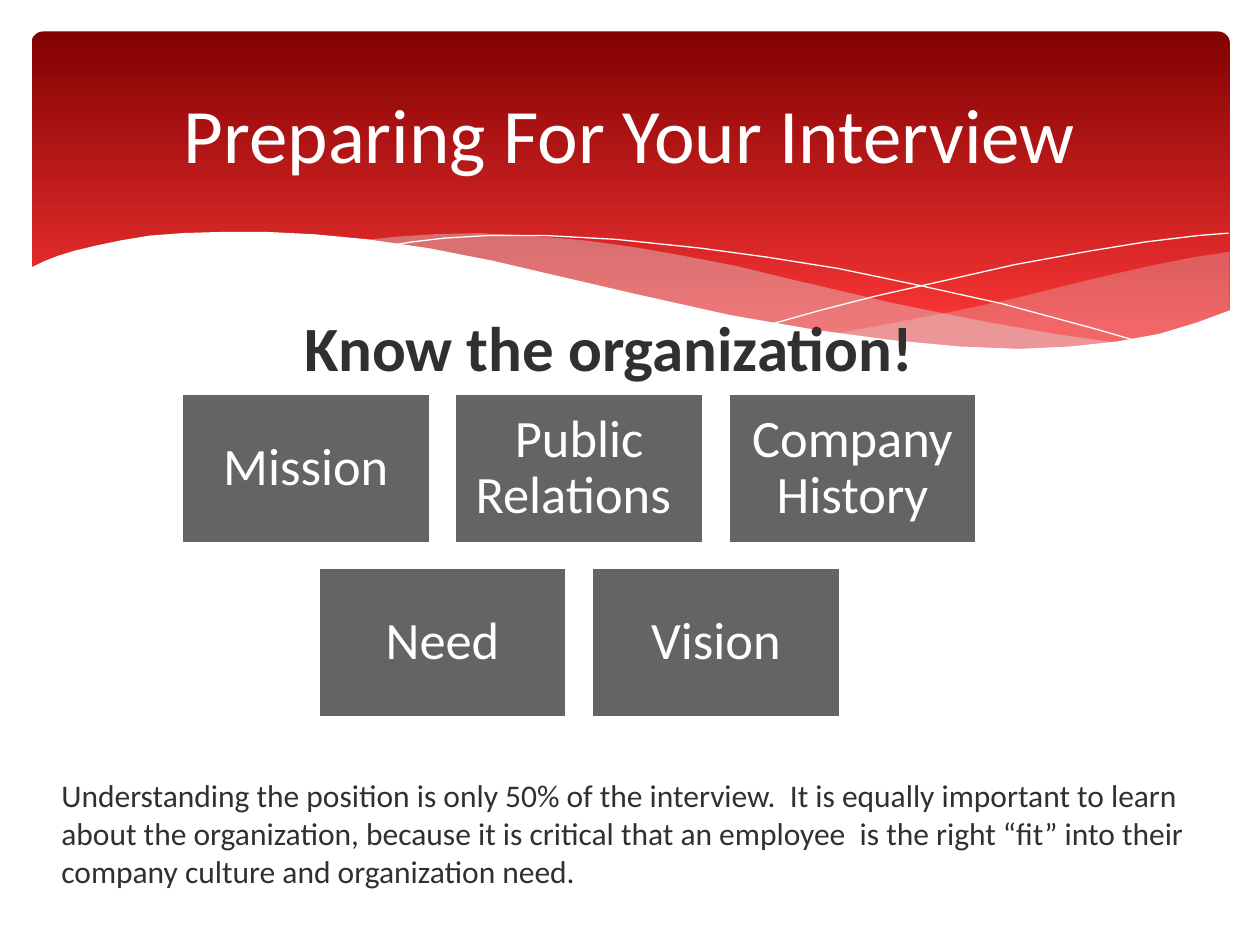
from lxml import etree
from pptx import Presentation
from pptx.dml.color import RGBColor
from pptx.enum.shapes import MSO_SHAPE
from pptx.enum.text import MSO_ANCHOR, MSO_AUTO_SIZE, PP_ALIGN
from pptx.oxml.ns import qn
from pptx.util import Pt

RECT, ROUND_RECT = MSO_SHAPE.RECTANGLE, MSO_SHAPE.ROUNDED_RECTANGLE
MIDDLE, TOP = MSO_ANCHOR.MIDDLE, MSO_ANCHOR.TOP
CENTER, LEFT = PP_ALIGN.CENTER, PP_ALIGN.LEFT
GROW = MSO_AUTO_SIZE.SHAPE_TO_FIT_TEXT

WHITE = RGBColor(0xFF, 0xFF, 0xFF)
DARK_RED = RGBColor(0x82, 0x01, 0x01)
RED = RGBColor(0xFE, 0x37, 0x37)
MIST = RGBColor(0xDE, 0xDE, 0xE0)
GRAY = RGBColor(0x64, 0x64, 0x64)
INK = RGBColor(0x30, 0x30, 0x30)

RIGHT_WAVE = [
    (702, 144), (682.6, 146.9), (662, 151), (641.5, 155.5), (620, 160.5),
    (579.6, 170.6), (542, 178.6), (508, 185), (476, 191), (507.6, 195.1),
    (536.4, 198), (562.3, 199.4), (586, 200), (607.7, 199.4), (627.8, 197.3),
    (645.8, 194.4), (663, 190.8), (678, 186.5), (693.4, 181.4),
    (702.7, 177.8), (702.7, 144)]
LEFT_WAVE = [
    (643, 196.6), (602.6, 190.8), (558, 182.9), (508.3, 172.8),
    (452.9, 159.8), (420.5, 152), (389.5, 146), (361.4, 141.1),
    (334.8, 137.5), (302.4, 134.6), (273.6, 133.2), (247.7, 133.9),
    (225.4, 135.4), (205.9, 137.5), (232.6, 141.1), (260.6, 146.2),
    (290.9, 151.9), (323.3, 159.8), (353.5, 167), (381.6, 172.8),
    (407.5, 178.6), (432.7, 183.6), (456.5, 187.9), (478.8, 191.5),
    (500.4, 194.4), (519.8, 196.6), (547.9, 198.7), (573.1, 200.2),
    (596.2, 200.2), (617, 199.4), (636.5, 197.3)]
FALLING_LINE = [
    (222.5, 140.4), (236, 138.2), (254.2, 136.1), (278.6, 134.6),
    (311.8, 134.6), (352, 136.8), (400.3, 141.8), (437.8, 146.9),
    (478.8, 153.4), (523.4, 162.7), (572.4, 173.5), (625.7, 187.9),
    (653, 195.8)]
RISING_LINE = [
    (441.4, 185), (470, 177), (500.4, 169.2), (538.6, 160.6), (580, 151.2),
    (623.5, 143.3), (655, 138.2), (684.7, 134.6), (702, 133.2)]
WHITE_WAVE = [
    (703.4, 177.1), (684, 184.3), (662.4, 190.8), (638.6, 195.1), (612, 198),
    (582.5, 199.4), (547.9, 198), (509.8, 194.4), (466.6, 188.6),
    (416.9, 180), (362.2, 167.8), (321.8, 158.4), (281.5, 149),
    (244.8, 141.8), (210.2, 136.8), (180, 133.9), (152, 132.5),
    (127.4, 132.5), (105, 133.2), (85.7, 134.6), (68.4, 137.5),
    (54.7, 140.4), (42.5, 143.3), (33.1, 146.2), (25.9, 149), (16.6, 153.4),
    (16.6, 236.9), (703.4, 236.9)]


def add_curve(points, closed):
    (x, y), *rest = [(Pt(x), Pt(y)) for x, y in points]
    builder = s.shapes.build_freeform(x, y)
    builder.add_line_segments(rest, close=closed)
    sp = builder.convert_to_shape()
    sp.shadow.inherit = False
    return sp


def write(sp, text, size, color, align, frame, bold=False):
    tf = sp.text_frame
    for name, value in frame.items():
        setattr(tf, name, value)
    p = tf.paragraphs[0]
    p.alignment = align
    r = p.add_run()
    r.text = text
    font = {"name": "Calibri", "size": Pt(size), "bold": bold}
    for name, value in font.items():
        setattr(r.font, name, value)
    r.font.color.rgb = color
    return p


prs = Presentation()
prs.slide_width, prs.slide_height = Pt(720), Pt(540)
s = prs.slides.add_slide(prs.slide_layouts[5])

banner = s.shapes.add_shape(ROUND_RECT, Pt(18), Pt(18), Pt(684.7), Pt(194.4))
banner.adjustments[0] = 0.034
banner.shadow.inherit = False
banner.line.fill.background()
banner.fill.gradient()
banner.fill.gradient_angle = 270
for stop, color, position in zip(banner.fill.gradient_stops, (DARK_RED, RED), (0, 0.9)):
    stop.color.rgb = color
    stop.position = position

for points, alpha in ((RIGHT_WAVE, 29), (LEFT_WAVE, 40)):
    sp = add_curve(points, True)
    sp.line.fill.background()
    sp.fill.solid()
    sp.fill.fore_color.rgb = MIST
    color_xml = next(sp.element.spPr.iter(qn("a:srgbClr")))
    etree.SubElement(color_xml, qn("a:alpha"), val=str(alpha * 1000))

for points in (FALLING_LINE, RISING_LINE):
    sp = add_curve(points, False)
    sp.fill.background()
    sp.line.color.rgb = WHITE
    sp.line.width = Pt(0)

sp = add_curve(WHITE_WAVE, True)
sp.line.fill.background()
sp.fill.solid()
sp.fill.fore_color.rgb = WHITE

title = s.shapes.title
title.element.getparent().append(title.element)
place = {"left": Pt(36), "top": Pt(26.6), "width": Pt(648), "height": Pt(98.6)}
for name, value in place.items():
    setattr(title, name, value)
write(title, "Preparing For Your Interview", 44, WHITE, CENTER,
      {"vertical_anchor": MIDDLE, "word_wrap": True})

TILE_W, TILE_H, GAP = 141.8, 85, 14.4
PITCH = TILE_W + GAP
TILE_LEFT, TILE_TOP = 103.9, 225.2
TILE_FRAME = {"vertical_anchor": MIDDLE, "word_wrap": True}
for side in ("left", "right", "top", "bottom"):
    TILE_FRAME["margin_" + side] = Pt(8.6)
rows = [["Mission", "Public Relations ", "Company History"], ["Need", "Vision"]]
for i, row in enumerate(rows):
    for j, text in enumerate(row):
        x = TILE_LEFT + (j + i / 2) * PITCH
        y = TILE_TOP + i * (TILE_H + GAP)
        tile = s.shapes.add_shape(RECT, Pt(x), Pt(y), Pt(TILE_W), Pt(TILE_H))
        tile.shadow.inherit = False
        tile.fill.solid()
        tile.fill.fore_color.rgb = GRAY
        tile.line.color.rgb = WHITE
        tile.line.width = Pt(1.25)
        p = write(tile, text, 30, WHITE, CENTER, TILE_FRAME)
        p.line_spacing = 0.9

BOX_FRAME = {"vertical_anchor": TOP, "word_wrap": True, "auto_size": GROW}
heading = s.shapes.add_textbox(Pt(167), Pt(172.8), Pt(386.6), Pt(51))
write(heading, "Know the organization!", 36, INK, LEFT, BOX_FRAME, bold=True)

note = s.shapes.add_textbox(Pt(28), Pt(440), Pt(656), Pt(72.7))
write(note, "Understanding the position is only 50% of the interview.  It is equally "
      "important to learn about the organization, because it is critical that an "
      "employee  is the right “fit” into their company culture and organization need.",
      18, INK, LEFT, BOX_FRAME)

prs.save("out.pptx")
